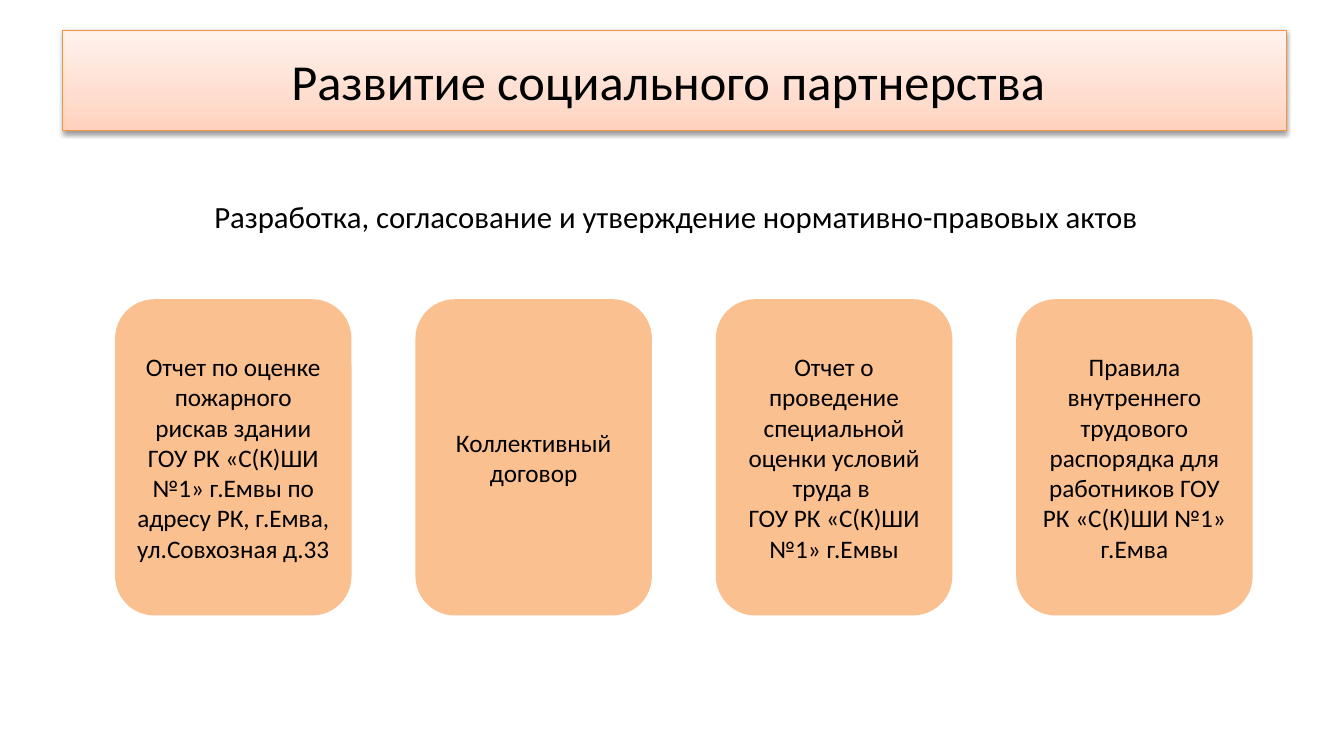
from copy import deepcopy

from pptx import Presentation
from pptx.dml.color import RGBColor
from pptx.enum.shapes import MSO_SHAPE as Shape
from pptx.enum.text import MSO_ANCHOR as Anchor, PP_ALIGN as Align
from pptx.oxml import parse_xml
from pptx.oxml.ns import nsdecls, qn
from pptx.util import Cm, Pt


def rgb(value):
    return RGBColor.from_string(value)


def write(sp, paragraphs, size):
    tf = sp.text_frame
    tf.word_wrap = True
    tf.vertical_anchor = Anchor.MIDDLE
    tf.text = "\n".join(paragraphs)
    for p in tf.paragraphs:
        p.alignment = Align.CENTER
        for name, value in {"name": "Calibri", "size": Pt(size)}.items():
            setattr(p.font, name, value)
        p.font.color.rgb = rgb("000000")


prs = Presentation()
prs.slide_width, prs.slide_height = Cm(33.87), Cm(19.05)
s = prs.slides.add_slide(prs.slide_layouts[5])

# Title banner with gradient and soft shadow
title = s.shapes.title
title.left, title.top, title.width, title.height = Cm(1.57), Cm(0.76), Cm(30.84), Cm(2.54)
write(title, ["Развитие социального партнерства "], 36)
title.fill.gradient()
title.fill.gradient_angle = 90
stops = title.element.spPr.find(".//" + qn("a:gsLst"))
stops.insert(1, deepcopy(stops[0]))
gradient = [(0, "FFD2BD"), (0.35, "FFDED0"), (1, "FFF2ED")]
for stop, (position, color) in zip(title.fill.gradient_stops, gradient):
    stop.position = position
    stop.color.rgb = rgb(color)
title.line.color.rgb = rgb("F69240")
title.line.width = Pt(0.75)
title.shadow.inherit = False
title.element.spPr.find(qn("a:effectLst")).append(parse_xml(
    f'<a:outerShdw {nsdecls("a")} blurRad="40000" dist="20000" dir="5400000" rotWithShape="0">'
    '<a:srgbClr val="000000"><a:alpha val="38000"/></a:srgbClr></a:outerShdw>'))

subtitle = s.shapes.add_textbox(Cm(2.06), Cm(3.99), Cm(29.95), Cm(2.92))
write(subtitle, ["Разработка, согласование и утверждение нормативно-правовых актов"], 22)

# Row of document cards
documents = [
    ["Отчет по оценке пожарного рискав здании ГОУ РК «С(К)ШИ №1» г.Емвы "
     "по адресу РК, г.Емва, ул.Совхозная д.33"],
    ["Коллективный договор"],
    ["Отчет о проведение специальной оценки условий труда в ",
     "ГОУ РК «С(К)ШИ №1» г.Емвы"],
    ["Правила внутреннего трудового распорядка для работников "
     "ГОУ РК «С(К)ШИ №1» г.Емва"],
]
for i, paragraphs in enumerate(documents):
    card = s.shapes.add_shape(Shape.ROUNDED_RECTANGLE, Cm(2.9 + 7.57 * i), Cm(7.54),
                              Cm(5.96), Cm(7.97))
    card.fill.solid()
    card.fill.fore_color.rgb = rgb("FAC090")
    card.line.fill.background()
    card.shadow.inherit = False
    write(card, paragraphs, 18)

prs.save("out.pptx")
